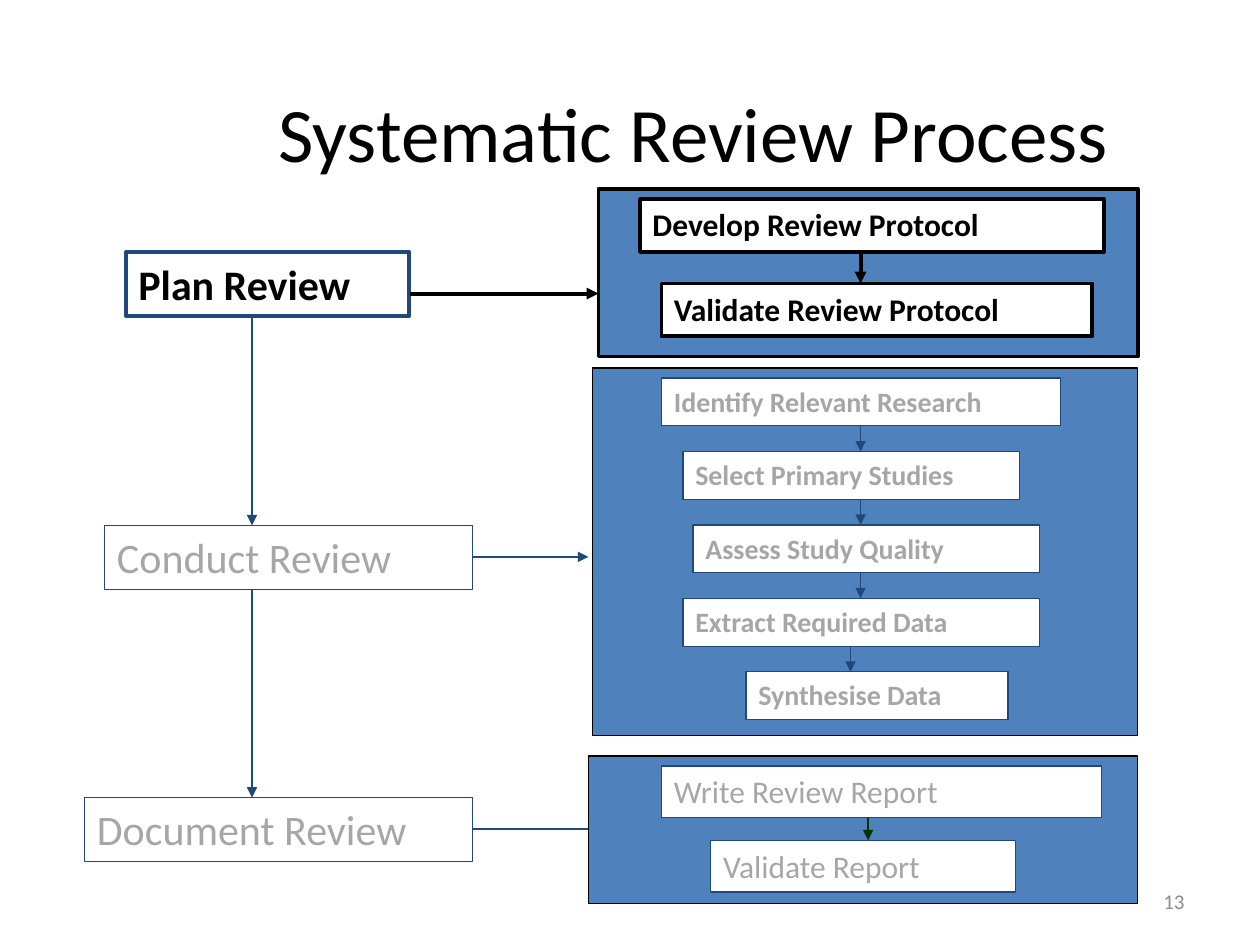
from pptx import Presentation
from pptx.dml.color import RGBColor
from pptx.enum.shapes import MSO_CONNECTOR as Connector, MSO_SHAPE as Preset
from pptx.enum.text import MSO_ANCHOR as Anchor, PP_ALIGN as Align
from pptx.oxml.ns import qn
from pptx.util import Inches, Pt
from lxml.etree import SubElement
from dataclasses import dataclass


@dataclass(frozen=True)
class Theme:
    font: str = "Calibri"
    ink: str = "000000"
    muted: str = "A6A6A6"
    number: str = "8C8C8C"
    panel: str = "4F81BD"
    navy: str = "1F497D"
    green: str = "003300"
    white: str = "FFFFFF"
    title_size: int = 44
    stage_size: int = 24
    step_size: int = 18
    small_size: int = 16
    number_size: int = 12
    thick: float = 2.25
    thin: float = 0.75


THEME = Theme()
TITLE = "Systematic Review Process"
PAGE = "13"
STAGE_HEIGHT = 0.51
SPINE_X = 2

# Steps: wording, left, width, x of the arrow leading on.
STAGES = [
    dict(name="Plan Review", left=1, top=2, width=2.25, arrow=(2.33, 4.75),
         panel=(4.75, 1.5, 4.28, 1.33), first=1.58, pitch=0.67, height=0.42,
         size=THEME.step_size, bold=True, active=True, link=THEME.ink,
         steps=[("Develop Review Protocol", 5.08, 3.68, 6.83),
                ("Validate Review Protocol", 5.25, 3.42, None)]),
    dict(name="Conduct Review", left=0.83, top=4.17, width=2.92, arrow=(4.42, 4.67),
         panel=(4.7, 2.92, 4.33, 2.92), first=3, pitch=0.583, height=0.38,
         size=THEME.small_size, bold=True, active=False, link=THEME.navy,
         steps=[("Identify Relevant Research", 5.25, 3.17, 6.83),
                ("Select Primary Studies", 5.42, 2.67, 6.83),
                ("Assess Study Quality", 5.5, 2.75, 6.83),
                ("Extract Required Data", 5.42, 2.83, 6.75),
                ("Synthesise Data", 5.92, 2.08, None)]),
    dict(name="Document Review", left=0.67, top=6.33, width=3.08, arrow=(6.58, 4.83),
         panel=(4.67, 6, 4.36, 1.17), first=6.08, pitch=0.59, height=0.41,
         size=THEME.step_size, bold=False, active=False, link=THEME.green,
         steps=[("Write Review Report", 5.25, 3.49, 6.89),
                ("Validate Report", 5.64, 2.42, None)]),
]


def write(target, text, *, size, color, bold=False, align=Align.LEFT, anchor=Anchor.TOP):
    frame = target.text_frame
    frame.word_wrap = True
    frame.vertical_anchor = anchor
    paragraph = frame.paragraphs[0]
    paragraph.alignment = align
    run = paragraph.add_run()
    run.text = text
    run.font.name = THEME.font
    run.font.size = Pt(size)
    run.font.bold = bold
    run.font.color.rgb = RGBColor.from_string(color)


def add_box(slide, place, fill, line, weight):
    box = slide.shapes.add_shape(Preset.RECTANGLE, *map(Inches, place))
    box.shadow.inherit = False
    box.fill.solid()
    box.fill.fore_color.rgb = RGBColor.from_string(fill)
    box.line.color.rgb = RGBColor.from_string(line)
    box.line.width = Pt(weight)
    return box


def add_arrow(slide, start, end, color, weight):
    arrow = slide.shapes.add_connector(Connector.STRAIGHT, *map(Inches, (*start, *end)))
    arrow.line.color.rgb = RGBColor.from_string(color)
    arrow.line.width = Pt(weight)
    SubElement(arrow.line._get_or_add_ln(), qn("a:tailEnd"), type="triangle")
    SubElement(arrow._element.spPr, qn("a:effectLst"))


def add_stage(slide, stage):
    active = stage["active"]
    weight = THEME.thick if active else THEME.thin
    accent = THEME.ink if active else THEME.navy
    color = THEME.ink if active else THEME.muted
    left, top, width = stage["left"], stage["top"], stage["width"]
    name = add_box(slide, (left, top, width, STAGE_HEIGHT), THEME.white, THEME.navy, weight)
    write(name, stage["name"], size=THEME.stage_size, color=color, bold=active)
    arrow_y, arrow_end = stage["arrow"]
    add_arrow(slide, (left + width, arrow_y), (arrow_end, arrow_y), accent, weight)
    add_box(slide, stage["panel"], THEME.panel, THEME.ink, weight)
    for index, (text, step_left, step_width, link_x) in enumerate(stage["steps"]):
        step_top = stage["first"] + index * stage["pitch"]
        place = (step_left, step_top, step_width, stage["height"])
        step = add_box(slide, place, THEME.white, accent, weight)
        write(step, text, size=stage["size"], color=color, bold=stage["bold"])
        if link_x:
            add_arrow(slide, (link_x, step_top + stage["height"]),
                      (link_x, step_top + stage["pitch"]), stage["link"], weight)


def main():
    """Build the review process slide."""
    deck = Presentation()
    deck.slide_width, deck.slide_height = Inches(10), Inches(7.5)
    slide = deck.slides.add_slide(deck.slide_layouts[6])
    number = slide.shapes.add_textbox(*map(Inches, (7.17, 6.95, 2.33, 0.4)))
    write(number, PAGE, size=THEME.number_size, color=THEME.number,
          align=Align.RIGHT, anchor=Anchor.MIDDLE)
    title = slide.shapes.add_textbox(*map(Inches, (1.67, 0.42, 7.67, 1.25)))
    write(title, TITLE, size=THEME.title_size, color=THEME.ink,
          align=Align.CENTER, anchor=Anchor.MIDDLE)
    for stage in STAGES:
        add_stage(slide, stage)
    for upper, lower in zip(STAGES, STAGES[1:]):
        add_arrow(slide, (SPINE_X, upper["top"] + STAGE_HEIGHT),
                  (SPINE_X, lower["top"]), THEME.navy, THEME.thin)
    deck.save("out.pptx")


if __name__ == "__main__":
    main()
